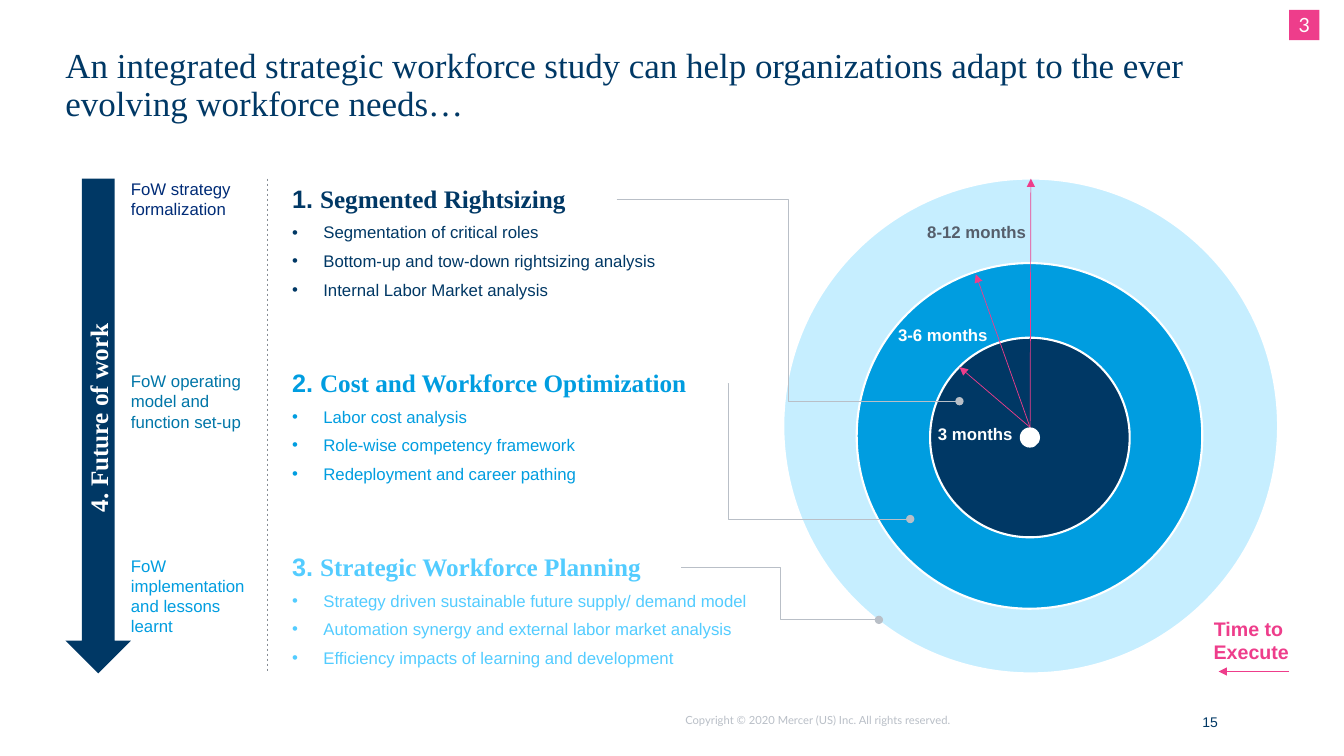
"""Build the workforce study slide with its time-to-execute rings."""
from dataclasses import dataclass
from typing import Optional

from lxml import etree
from pptx import Presentation
from pptx.dml.color import RGBColor
from pptx.enum.dml import MSO_LINE
from pptx.enum.shapes import MSO_CONNECTOR, MSO_SHAPE
from pptx.enum.text import MSO_ANCHOR, PP_ALIGN
from pptx.oxml.ns import qn
from pptx.util import Cm, Pt

STRAIGHT, ELBOW = MSO_CONNECTOR.STRAIGHT, MSO_CONNECTOR.ELBOW
OVAL, RECT, DOWN_ARROW = MSO_SHAPE.OVAL, MSO_SHAPE.RECTANGLE, MSO_SHAPE.DOWN_ARROW
HUB_DOT = MSO_SHAPE.FLOWCHART_CONNECTOR
LEFT, CENTER, RIGHT = PP_ALIGN.LEFT, PP_ALIGN.CENTER, PP_ALIGN.RIGHT
MIDDLE = MSO_ANCHOR.MIDDLE
DASH = MSO_LINE.DASH


@dataclass(frozen=True)
class Theme:
    """Colours, fonts and type sizes of the slide."""
    navy: str = "003865"
    blue: str = "009DE0"
    sky: str = "53CCFF"
    pale: str = "C6EEFF"
    ink: str = "002C77"
    teal: str = "0076A8"
    pink: str = "EE3D8B"
    slate: str = "555E6B"
    gray: str = "868D95"
    silver: str = "B9BFC7"
    white: str = "FFFFFF"
    sans: str = "Arial"
    serif: str = "Times New Roman"
    small: str = "Lato"
    title: int = 25
    heading: int = 18
    accent: int = 14
    body: int = 12
    page: int = 10
    footer: int = 8


T = Theme()
TOP, HEIGHT, STEP = 4.5, 12.47, 4.64
HUB = (25.96, 10.77)


@dataclass(frozen=True)
class Ring:
    """A filled circle of the time diagram."""
    left: float
    top: float
    size: float
    color: str


@dataclass(frozen=True)
class Section:
    """A numbered topic with its leader, its hand and its duration."""
    heading: str
    bullets: tuple
    color: str
    lead_x: float
    lead_end: tuple
    bend: int
    hand_end: tuple
    months: str
    months_at: tuple
    months_color: str


@dataclass(frozen=True)
class Note:
    """A remark beside the future of work arrow."""
    text: str
    top: float
    color: str


RINGS = (
    Ring(19.74, TOP, HEIGHT, T.pale),
    Ring(21.59, 6.63, 8.71, T.blue),
    Ring(23.44, 8.51, 5.03, T.navy),
)
SECTIONS = (
    Section("Segmented Rightsizing",
            ("Segmentation of critical roles",
             "Bottom-up and tow-down rightsizing analysis",
             "Internal Labor Market analysis"),
            T.navy, 15.54, (24.18, 10.11), 50000, (24.18, 9.25),
            "3 months", (21.89, 10.67), T.white),
    Section("Cost and Workforce Optimization",
            ("Labor cost analysis",
             "Role-wise competency framework",
             "Redeployment and career pathing"),
            T.blue, 18.34, (22.94, 13.08), 500, (24.59, 6.91),
            "3-6 months", (21.26, 8.18), T.white),
    Section("Strategic Workforce Planning",
            ("Strategy driven sustainable future supply/ demand model",
             "Automation synergy and external labor market analysis",
             "Efficiency impacts of learning and development"),
            T.sky, 17.17, (22.15, 15.62), 50000, (25.98, TOP),
            "8-12 months", (22.23, 5.59), T.slate),
)
NOTES = (
    Note("FoW strategy formalization", TOP, T.ink),
    Note("FoW operating model and function set-up", 9.35, T.teal),
    Note("FoW implementation and lessons learnt", 14.0, T.blue),
)


def style(p, size: int, color: str, font: Optional[str] = None, bold: bool = False) -> None:
    """Set the font of a paragraph."""
    p.font.size, p.font.bold = Pt(size), bold
    p.font.color.rgb = RGBColor.from_string(color)
    if font:
        p.font.name = font


def write(sp, text: str, size: int, color: str, font: str = T.sans,
          bold: bool = False, align=LEFT, wrap: bool = True):
    """Write one paragraph into a shape without insets and return it."""
    tf = sp.text_frame
    tf.margin_left = tf.margin_top = tf.margin_right = tf.margin_bottom = 0
    tf.word_wrap = wrap
    p = tf.paragraphs[0]
    p.text, p.alignment = text, align
    style(p, size, color, font, bold)
    return p


def add_box(s, left: float, top: float, width: float, height: float):
    """Add a text box."""
    return s.shapes.add_textbox(Cm(left), Cm(top), Cm(width), Cm(height))


def add_filled(s, kind, left: float, top: float, width: float, height: float,
               color: str, outline: Optional[str] = None):
    """Add a filled preset shape."""
    sp = s.shapes.add_shape(kind, Cm(left), Cm(top), Cm(width), Cm(height))
    sp.shadow.inherit = False
    sp.fill.solid()
    sp.fill.fore_color.rgb = RGBColor.from_string(color)
    if outline:
        sp.line.color.rgb = RGBColor.from_string(outline)
        sp.line.width = Pt(1.5)
    else:
        sp.line.fill.background()
    return sp


def add_line(s, start: tuple, end: tuple, color: str, width: float = 0.5,
             kind=STRAIGHT, tail: Optional[str] = None, dash=None, bend: int = 50000) -> None:
    """Add a connector with an optional end mark, dash and bend."""
    line = s.shapes.add_connector(kind, *(Cm(v) for v in start + end))
    line.line.color.rgb = RGBColor.from_string(color)
    line.line.width = Pt(width)
    if dash:
        line.line.dash_style = dash
    sp_pr = line._element.spPr
    if tail:
        etree.SubElement(sp_pr.find(qn("a:ln")), qn("a:tailEnd"), type=tail)
    if kind == ELBOW:
        guides = sp_pr.find(qn("a:prstGeom")).find(qn("a:avLst"))
        etree.SubElement(guides, qn("a:gd"), name="adj1", fmla=f"val {bend}")
    etree.SubElement(sp_pr, qn("a:effectLst"))


def add_section(s, number: int, section: Section) -> None:
    """Draw a section with everything that ties it to the rings."""
    top = TOP + (number - 1) * STEP
    add_line(s, (section.lead_x, top + 0.52), section.lead_end, T.silver, 0.75,
             ELBOW, "oval", bend=section.bend)
    tf = add_box(s, 7.11, top, HEIGHT, 3.2).text_frame
    tf.word_wrap = True
    p = tf.paragraphs[0]
    p.space_after = Pt(6)
    style(p, T.heading, section.color, bold=True)
    for text, font in ((f"{number}. ", T.sans), (section.heading, T.serif)):
        r = p.add_run()
        r.text, r.font.name = text, font
    for bullet in section.bullets:
        p = tf.add_paragraph()
        p.text, p.space_after = bullet, Pt(6)
        p_pr = p._p.get_or_add_pPr()
        p_pr.set("marL", str(Cm(0.79)))
        p_pr.set("indent", str(-Cm(0.79)))
        etree.SubElement(p_pr, qn("a:buFont"), typeface=T.sans)
        etree.SubElement(p_pr, qn("a:buChar"), char="•")
        style(p, T.body, section.color, T.sans)
    add_line(s, HUB, section.hand_end, T.pink, tail="triangle")
    write(add_box(s, *section.months_at, 3.63, 0.51), section.months,
          T.body, section.months_color, bold=True, align=RIGHT)


def add_future_of_work(s) -> None:
    """Draw the vertical arrow, its notes and the divider."""
    arrow = add_filled(s, DOWN_ARROW, 1.65, TOP, 1.65, HEIGHT, T.navy)
    write(arrow, "4. Future of work", T.heading, T.white, T.serif, True, CENTER)
    arrow.text_frame.vertical_anchor = MIDDLE
    arrow.text_frame._txBody.bodyPr.set("vert", "vert270")
    for note in NOTES:
        write(add_box(s, 3.3, note.top, 3.23, 1.32), note.text, T.body, note.color)
    add_line(s, (6.73, TOP), (6.73, TOP + HEIGHT), T.gray, dash=DASH)


def main() -> None:
    """Build and save the slide."""
    prs = Presentation()
    prs.slide_width, prs.slide_height = Cm(33.87), Cm(19.05)
    s = prs.slides.add_slide(prs.slide_layouts[6])
    write(add_box(s, 17.27, 17.98, 11.63, 0.76),
          "Copyright © 2020 Mercer (US) Inc. All rights reserved.",
          T.footer, T.silver, T.small, wrap=False)
    title = write(add_box(s, 1.65, 1.22, 30.56, 2.64),
                  "An integrated strategic workforce study can help organizations "
                  "adapt to the ever evolving workforce needs…", T.title, T.navy, T.serif)
    title.line_spacing = 0.9
    write(add_box(s, 30.3, 17.98, 1.9, 0.76), "15", T.page, T.navy)
    for ring in RINGS:
        add_filled(s, OVAL, ring.left, ring.top, ring.size, ring.size, ring.color, T.white)
    for number, section in enumerate(SECTIONS, 1):
        add_section(s, number, section)
    write(add_box(s, 29.72, 15.54, 3.63, 1.19), "Time to \vExecute",
          T.accent, T.pink, bold=True, align=CENTER)
    add_line(s, (32.49, 16.92), (30.71, 16.92), T.pink, tail="triangle")
    add_filled(s, HUB_DOT, 25.7, HUB[1], 0.51, 0.51, T.white)
    add_future_of_work(s)
    badge = add_filled(s, RECT, 32.49, 0.25, 0.76, 0.76, T.pink)
    write(badge, "3", T.accent, T.white, T.small, align=CENTER)
    badge.text_frame.vertical_anchor = MIDDLE
    prs.save("out.pptx")


if __name__ == "__main__":
    main()
